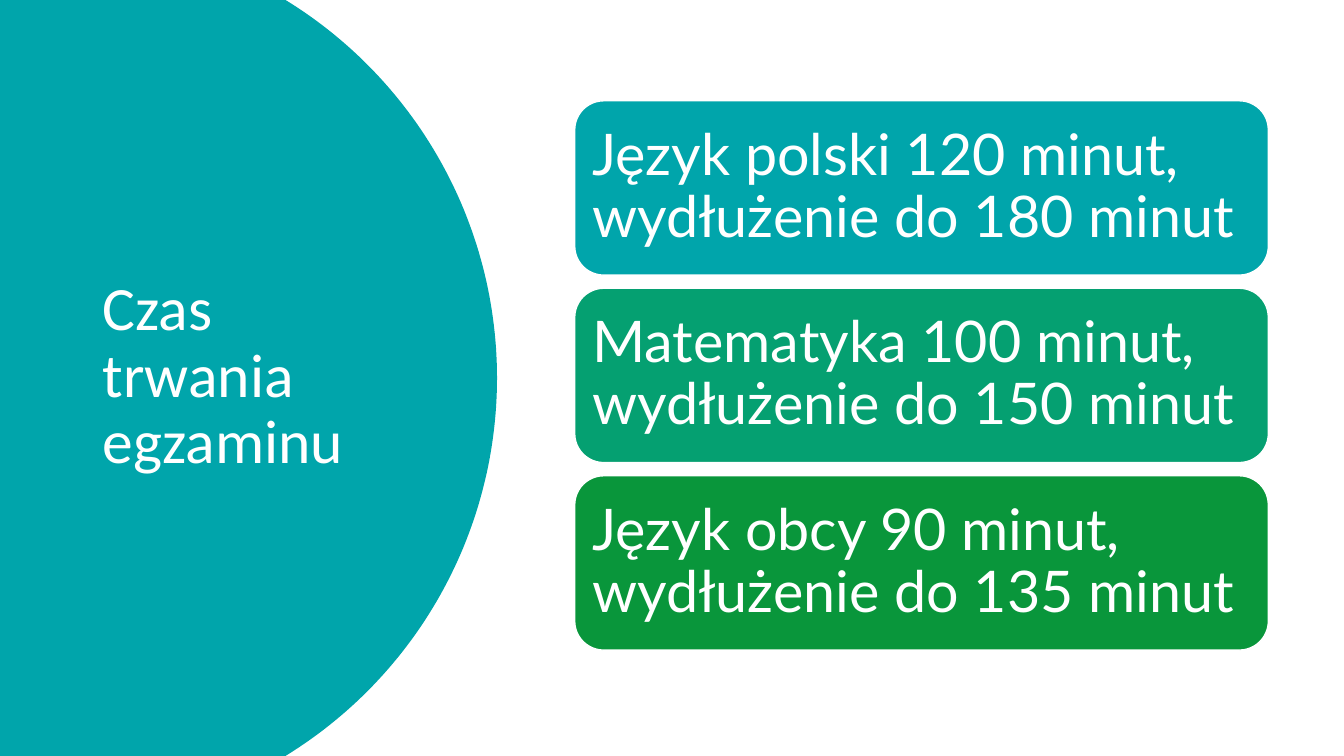
from dataclasses import dataclass
from math import asin, cos, sin

from pptx import Presentation
from pptx.dml.color import RGBColor
from pptx.enum.shapes import MSO_SHAPE
from pptx.enum.text import MSO_ANCHOR, PP_ALIGN
from pptx.shapes.autoshape import Shape
from pptx.slide import Slide
from pptx.util import Inches, Pt

ROUNDED = MSO_SHAPE.ROUNDED_RECTANGLE
MIDDLE = MSO_ANCHOR.MIDDLE
LEFT = PP_ALIGN.LEFT

SLIDE_WIDTH, SLIDE_HEIGHT = 13.33, 7.5
CIRCLE_CENTRE_X, CIRCLE_RADIUS = 0.53, 4.4
ARC_STEPS = 120
CARD_LEFT, CARD_TOP = 5.7, 1.0
CARD_WIDTH, CARD_HEIGHT = 6.88, 1.73
CARD_PITCH = 1.86
CARD_INSET = 0.09


@dataclass(frozen=True)
class Theme:
    white: RGBColor = RGBColor(0xFF, 0xFF, 0xFF)
    teal: RGBColor = RGBColor(0x00, 0xA5, 0xAB)
    sea_green: RGBColor = RGBColor(0x05, 0xA0, 0x71)
    green: RGBColor = RGBColor(0x09, 0x96, 0x3B)
    title_font: str = "Calibri"
    card_font: str = "Lato"
    title_size: int = 44
    card_size: int = 41


THEME = Theme()


@dataclass(frozen=True)
class ExamCard:
    text: str
    color: RGBColor


EXAM_CARDS = (
    ExamCard("Język polski 120 minut, wydłużenie do 180 minut", THEME.teal),
    ExamCard("Matematyka 100 minut, wydłużenie do 150 minut", THEME.sea_green),
    ExamCard("Język obcy 90 minut, wydłużenie do 135 minut", THEME.green),
)


def write_text(shape: Shape, text: str, font: str, size: int) -> None:
    frame = shape.text_frame
    frame.word_wrap = True
    frame.vertical_anchor = MIDDLE
    paragraph = frame.paragraphs[0]
    paragraph.alignment = LEFT
    paragraph.line_spacing = 0.9
    run = paragraph.add_run()
    run.text = text
    run.font.name = font
    run.font.size = Pt(size)
    run.font.color.rgb = THEME.white


def add_circle_panel(slide: Slide) -> None:
    """Fill the left side up to an arc that meets the slide's top and bottom."""
    middle = SLIDE_HEIGHT / 2
    half_angle = asin(middle / CIRCLE_RADIUS)
    angles = [half_angle * (2 * step / ARC_STEPS - 1) for step in range(ARC_STEPS + 1)]
    arc = [
        (
            Inches(CIRCLE_CENTRE_X + CIRCLE_RADIUS * cos(angle)),
            Inches(middle + CIRCLE_RADIUS * sin(angle)),
        )
        for angle in angles
    ]
    builder = slide.shapes.build_freeform(0, 0)
    builder.add_line_segments([*arc, (0, Inches(SLIDE_HEIGHT))], close=True)
    panel = builder.convert_to_shape()
    panel.shadow.inherit = False
    panel.fill.solid()
    panel.fill.fore_color.rgb = THEME.teal
    panel.line.fill.background()


def add_title(slide: Slide) -> None:
    title = slide.shapes.add_textbox(Inches(0.92), Inches(0.7), Inches(3.23), Inches(6.09))
    write_text(title, "Czas trwania egzaminu", THEME.title_font, THEME.title_size)


def add_exam_card(slide: Slide, card: ExamCard, top: float) -> None:
    shape = slide.shapes.add_shape(
        ROUNDED, Inches(CARD_LEFT), Inches(top), Inches(CARD_WIDTH), Inches(CARD_HEIGHT)
    )
    shape.shadow.inherit = False
    shape.fill.solid()
    shape.fill.fore_color.rgb = card.color
    shape.line.color.rgb = THEME.white
    shape.line.width = Pt(1)
    frame = shape.text_frame
    frame.margin_left = frame.margin_right = Inches(CARD_INSET)
    frame.margin_top = frame.margin_bottom = Inches(CARD_INSET)
    write_text(shape, card.text, THEME.card_font, THEME.card_size)


def main() -> None:
    presentation = Presentation()
    presentation.slide_width = Inches(SLIDE_WIDTH)
    presentation.slide_height = Inches(SLIDE_HEIGHT)
    slide = presentation.slides.add_slide(presentation.slide_layouts[6])
    add_circle_panel(slide)
    add_title(slide)
    for index, card in enumerate(EXAM_CARDS):
        add_exam_card(slide, card, CARD_TOP + index * CARD_PITCH)
    presentation.save("out.pptx")


if __name__ == "__main__":
    main()
